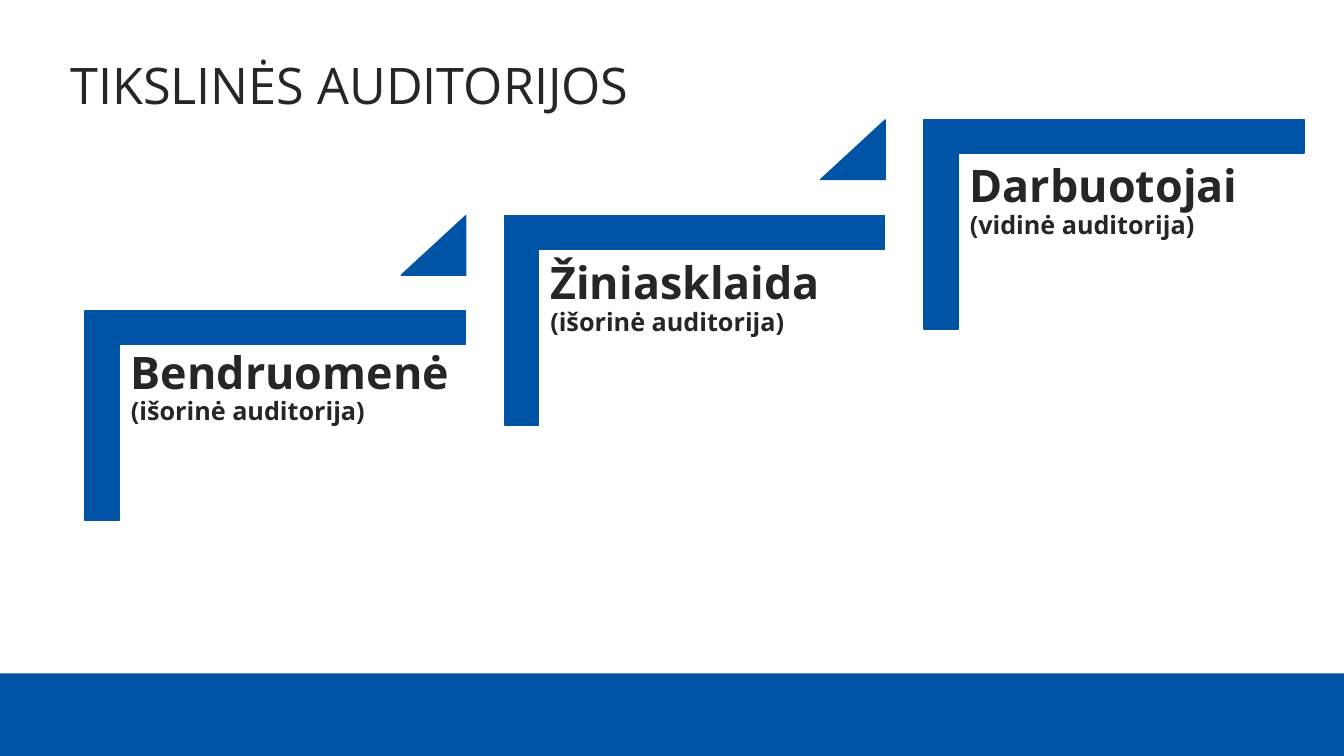
from pptx import Presentation
from pptx.dml.color import RGBColor
from pptx.enum import shapes, text
from pptx.util import Inches, Pt

BLUE = RGBColor(0x00, 0x54, 0xA5)
DARK = RGBColor(0x26, 0x26, 0x26)
WHITE = RGBColor(0xFF, 0xFF, 0xFF)

deck = Presentation()
deck.slide_width, deck.slide_height = Inches(13.33), Inches(7.5)
page = deck.slides.add_slide(deck.slide_layouts[6])
page.background.fill.solid()
page.background.fill.fore_color.rgb = WHITE


def add_blue(kind, left, top, width, height, outlined=True):
    shape = page.shapes.add_shape(
        kind, Inches(left), Inches(top), Inches(width), Inches(height))
    shape.shadow.inherit = False
    shape.fill.solid()
    shape.fill.fore_color.rgb = BLUE
    if outlined:
        shape.line.color.rgb = BLUE
        shape.line.width = Pt(1)
    else:
        shape.line.fill.background()
    return shape


def add_text(left, top, width, height, anchor, lines):
    box = page.shapes.add_textbox(
        Inches(left), Inches(top), Inches(width), Inches(height))
    frame = box.text_frame
    frame.word_wrap = True
    frame.vertical_anchor = anchor
    para = frame.paragraphs[0]
    para.line_spacing = 0.9
    for index, (words, size, bold) in enumerate(lines):
        if index:
            para.add_line_break()
        span = para.add_run()
        span.text = words
        font_format = {"name": "Open Sans", "size": Pt(size), "bold": bold}
        for name, value in font_format.items():
            setattr(span.font, name, value)
        span.font.color.rgb = DARK


# Footer band and title
add_blue(shapes.MSO_SHAPE.RECTANGLE, 0, 6.68, 13.33, 0.82, outlined=False)
add_text(0.6, 0.3, 12.1, 0.89, text.MSO_ANCHOR.BOTTOM,
         [("TIKSLINĖS AUDITORIJOS", 36, False)])

# Rising steps: audience, note, top of its text
audiences = [
    ("Bendruomenė", "(išorinė auditorija)", 3.43),
    ("Žiniasklaida", "(išorinė auditorija)", 2.54),
    ("Darbuotojai", "(vidinė auditorija)", 1.58),
]
STEP_RIGHT, STEP_UP = 4.16, 0.95

for index, (audience, note, text_top) in enumerate(audiences):
    right, up = index * STEP_RIGHT, index * STEP_UP

    # Corner bracket, turned so that its elbow is at the top left
    bracket = add_blue(shapes.MSO_SHAPE.CORNER, 1.69 + right, 2.24 - up, 2.08, 3.77)
    bracket.rotation = 90
    bracket.adjustments[0] = bracket.adjustments[1] = 0.161

    # Triangle leading up to the next step
    if index < len(audiences) - 1:
        triangle = add_blue(shapes.MSO_SHAPE.ISOSCELES_TRIANGLE,
                            3.98 + right, 2.14 - up, 0.64, 0.59)
        triangle.adjustments[0] = 1

    add_text(1.2 + right, text_top, 3.4, 0.86, text.MSO_ANCHOR.TOP,
             [(audience, 32, True), (note, 18, True)])

deck.save("out.pptx")
